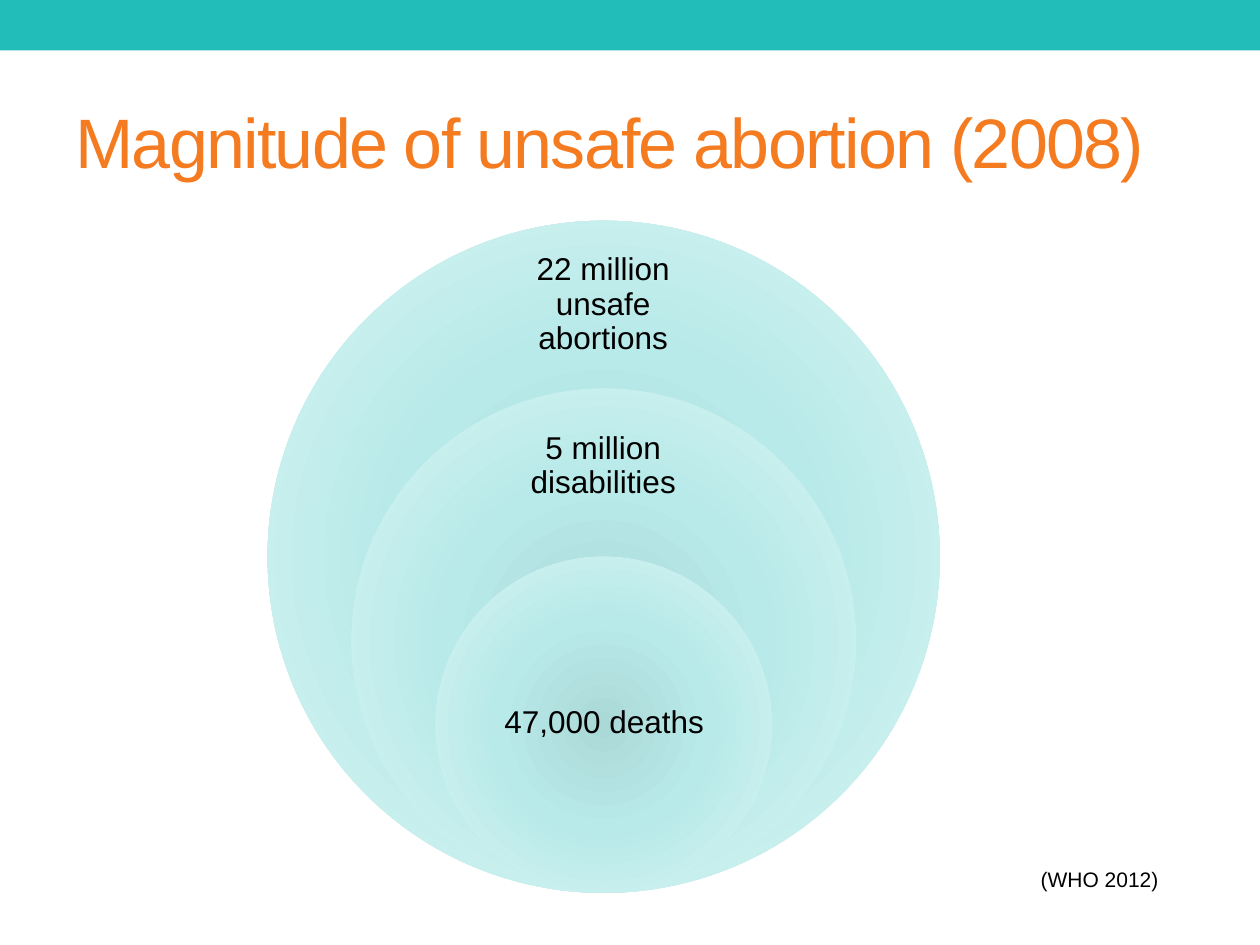
from dataclasses import dataclass

from pptx import Presentation
from pptx.dml.color import RGBColor as RGB
from pptx.enum.shapes import MSO_SHAPE as Shape
from pptx.enum.text import MSO_ANCHOR as Anchor, PP_ALIGN as Align
from pptx.oxml import parse_xml
from pptx.oxml.ns import nsdecls, qn
from pptx.util import Cm, Pt


@dataclass(frozen=True)
class Theme:
    """Colours, font and type sizes of the slide."""
    font: str = "Arial"
    band: str = "22BCB9"
    title: str = "F47B20"
    text: str = "000000"
    glow: tuple = ((0, "ABD9D8"), (45, "B8EAE9"), (100, "D8F4F3"))
    title_size: int = 40
    label_size: int = 18
    source_size: int = 12


THEME = Theme()
CENTRE_X, BOTTOM, OUTER = 12.17, 18.0, 13.55
RINGS = (
    ("22 million unsafe abortions", 1, (9.8, 5.13, 4.72, 2.03)),
    ("5 million disabilities", 0.75, (9.8, 8.46, 4.72, 1.9)),
    ("47,000 deaths", 0.5, (9.78, 12.9, 4.8, 3.38)),
)


def add_shape(shapes, kind, box):
    """Add a preset shape without outline or shadow."""
    sp = shapes.add_shape(kind, *map(Cm, box))
    sp.shadow.inherit = False
    sp.line.fill.background()
    return sp


def add_band(shapes):
    """Add the plain band along the top edge."""
    sp = add_shape(shapes, Shape.RECTANGLE, (0, 0, 25.4, 1.02))
    sp.fill.solid()
    sp.fill.fore_color.rgb = RGB.from_string(THEME.band)


def add_text(shapes, text, box, size, color=THEME.text):
    """Add a one-paragraph text box and return its frame."""
    tf = shapes.add_textbox(*map(Cm, box)).text_frame
    tf.word_wrap = True
    tf.text = text
    font = tf.paragraphs[0].runs[0].font
    font.name, font.size = THEME.font, Pt(size)
    font.color.rgb = RGB.from_string(color)
    return tf


def add_title(shapes, text):
    """Add the tightly spaced title."""
    tf = add_text(shapes, text, (1.27, 1.47, 22.86, 2.74), THEME.title_size, THEME.title)
    tf.vertical_anchor = Anchor.MIDDLE
    tf.paragraphs[0].runs[0].font._element.set("spc", "-100")


def fill_radial(sp, stops):
    """Fill a shape with a gradient running out from its centre."""
    sp.fill.gradient()
    sp_pr = sp._element.spPr
    stop_xml = "".join(
        f'<a:gs pos="{pos * 1000}"><a:srgbClr val="{color}"/></a:gs>' for pos, color in stops)
    radial = parse_xml(
        f'<a:gradFill {nsdecls("a")} rotWithShape="1"><a:gsLst>{stop_xml}</a:gsLst>'
        '<a:path path="circle"><a:fillToRect l="50000" t="50000" r="50000" b="50000"/></a:path>'
        '</a:gradFill>')
    sp_pr.replace(sp_pr.find(qn("a:gradFill")), radial)


def add_ring(shapes, text, ratio, label_box):
    """Add a circle resting on the common bottom point, with its label."""
    size = OUTER * ratio
    sp = add_shape(shapes, Shape.OVAL, (CENTRE_X - size / 2, BOTTOM - size, size, size))
    fill_radial(sp, THEME.glow)
    tf = add_text(shapes, text, label_box, THEME.label_size)
    tf.vertical_anchor = Anchor.MIDDLE
    tf.margin_left = tf.margin_right = tf.margin_top = tf.margin_bottom = Cm(0.36)
    p = tf.paragraphs[0]
    p.alignment, p.line_spacing = Align.CENTER, 0.9


def main():
    """Build the slide and save it."""
    prs = Presentation()
    prs.slide_width, prs.slide_height = Cm(25.4), Cm(19.05)
    s = prs.slides.add_slide(prs.slide_layouts[6])
    add_band(s.shapes)
    add_title(s.shapes, "Magnitude of unsafe abortion (2008)")
    diagram = s.shapes.add_group_shape()
    for ring in RINGS:
        add_ring(diagram.shapes, *ring)
    add_text(s.shapes, "(WHO 2012)", (20.73, 17.35, 4.24, 0.76), THEME.source_size)
    prs.save("out.pptx")


if __name__ == "__main__":
    main()
